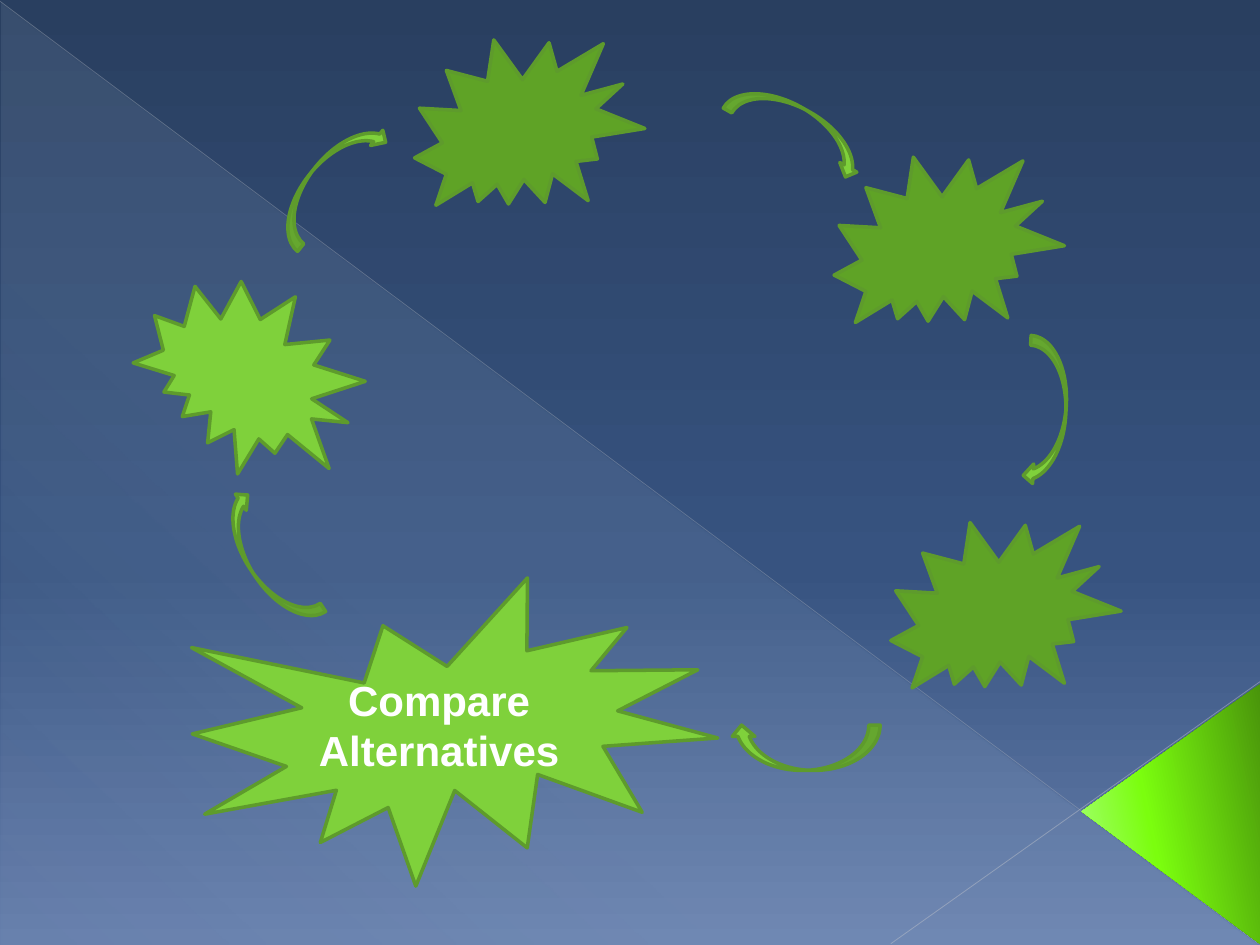
from lxml import etree
from pptx import Presentation
from pptx import util as u
from pptx.dml.color import RGBColor
from pptx.enum import shapes, text
from pptx.oxml.ns import qn

PX = 9144  # 100 px to the inch
NAVY = RGBColor(0x29, 0x3F, 0x60)
BLUE = RGBColor(0x37, 0x53, 0x80)
HAZE = RGBColor(0x66, 0x7F, 0xAC)
SHEEN = RGBColor(0xD6, 0xEC, 0xFF)
DARK_GREEN = RGBColor(0x49, 0x94, 0x0B)
NEON = RGBColor(0x7B, 0xFE, 0x0E)
PALE_GREEN = RGBColor(0xA8, 0xFF, 0x7D)
LIME = RGBColor(0x7F, 0xD1, 0x3B)
LEAF = RGBColor(0x5F, 0xA3, 0x26)
EDGE = RGBColor(0x5E, 0x9B, 0x2C)
WHITE = RGBColor(0xFF, 0xFF, 0xFF)
KIND = shapes.MSO_SHAPE


def set_gradient(fill, properties, angle, stops):
    """Fill with (position %, colour, opacity %) stops, angle clockwise."""
    fill.gradient()
    gradient = properties.find(qn("a:gradFill"))
    gradient.find(qn("a:lin")).set("ang", str(angle * 60000))
    stop_list = gradient.find(qn("a:gsLst"))
    for old_stop in list(stop_list):
        stop_list.remove(old_stop)
    for position, colour, opacity in stops:
        stop = etree.SubElement(stop_list, qn("a:gs"), pos=str(position * 1000))
        tone = etree.SubElement(stop, qn("a:srgbClr"), val=str(colour))
        if opacity < 100:
            etree.SubElement(tone, qn("a:alpha"), val=str(opacity * 1000))


def add_figure(kind, left, top, width, height, rotation=0):
    figure = slide.shapes.add_shape(kind, left * PX, top * PX, width * PX, height * PX)
    figure.rotation = rotation
    figure.shadow.inherit = False
    return figure


deck = Presentation()
deck.slide_width, deck.slide_height = 1000 * PX, 750 * PX
slide = deck.slides.add_slide(deck.slide_layouts[6])

# Backdrop
backdrop = slide.background.fill
backdrop.gradient()
set_gradient(backdrop, slide.element.find(".//" + qn("p:bgPr")), 90,
             [(0, NAVY, 100), (60, BLUE, 100), (100, HAZE, 100)])

sheen = add_figure(KIND.RIGHT_TRIANGLE, 1, 2, 998, 748)
set_gradient(sheen.fill, sheen.element.spPr, 133,
             [(0, SHEEN, 10), (70, SHEEN, 8), (100, SHEEN, 1)])
sheen.line.fill.background()

for x1, y1, x2, y2, colour, weight, opacity in [
    (0, 1, 999, 749, RGBColor(0xB7, 0xBC, 0xC5), 0.39, 35),
    (1000, 541, 707, 749, RGBColor(0xBF, 0xC3, 0xCB), 0.47, 45),
]:
    crease = slide.shapes.add_connector(
        shapes.MSO_CONNECTOR.STRAIGHT, x1 * PX, y1 * PX, x2 * PX, y2 * PX)
    crease.line.color.rgb = colour
    crease.line.width = u.Pt(weight)
    properties = crease.element.spPr
    tone = properties.find(".//" + qn("a:srgbClr"))
    etree.SubElement(tone, qn("a:alpha"), val=str(opacity * 1000))
    etree.SubElement(properties, qn("a:effectLst"))

corner = add_figure(KIND.ISOSCELES_TRIANGLE, 826, 575, 207, 142, 270)
corner.adjustments[0] = 0.51
set_gradient(corner.fill, corner.element.spPr, 258,
             [(0, DARK_GREEN, 100), (60, NEON, 100), (100, PALE_GREEN, 100)])
corner.line.fill.background()

# Cycle of bursts joined by curved arrows
ARROW, BURST = (31, 119), (173, 167)
for kind, left, top, (width, height), rotation, colour in [
    (KIND.EXPLOSION1, 154, 466, (414, 233), 353.5, LIME),
    (KIND.CURVED_LEFT_ARROW, 618, 42, ARROW, 299.4, LIME),
    (KIND.CURVED_LEFT_ARROW, 246, 84, ARROW, 218.9, LIME),
    (KIND.CURVED_LEFT_ARROW, 197, 385, ARROW, 146.2, LIME),
    (KIND.CURVED_LEFT_ARROW, 621, 534, (36, 119), 90, LIME),
    (KIND.CURVED_LEFT_ARROW, 815, 267, ARROW, 3.2, LIME),
    (KIND.EXPLOSION2, 333, 18, BURST, 20.7, LEAF),
    (KIND.EXPLOSION2, 114, 219, BURST, 69.2, LIME),
    (KIND.EXPLOSION2, 666, 111, BURST, 20.7, LEAF),
    (KIND.EXPLOSION2, 711, 401, BURST, 20.7, LEAF),
]:
    step = add_figure(kind, left, top, width, height, rotation)
    step.fill.solid()
    step.fill.fore_color.rgb = colour
    step.line.color.rgb = EDGE
    step.line.width = u.Pt(2)

# Label of the current step
label = slide.shapes.add_textbox(242 * PX, 530 * PX, 213 * PX, 91 * PX).text_frame
label.word_wrap = False
label.auto_size = text.MSO_AUTO_SIZE.SHAPE_TO_FIT_TEXT
for index, word in enumerate(["Compare", "Alternatives"]):
    paragraph = label.add_paragraph() if index else label.paragraphs[0]
    paragraph.alignment = text.PP_ALIGN.CENTER
    run = paragraph.add_run()
    run.text = word
    run.font.name = "Arial"
    run.font.size = u.Pt(24)
    run.font.bold = True
    run.font.color.rgb = WHITE

deck.save("out.pptx")
